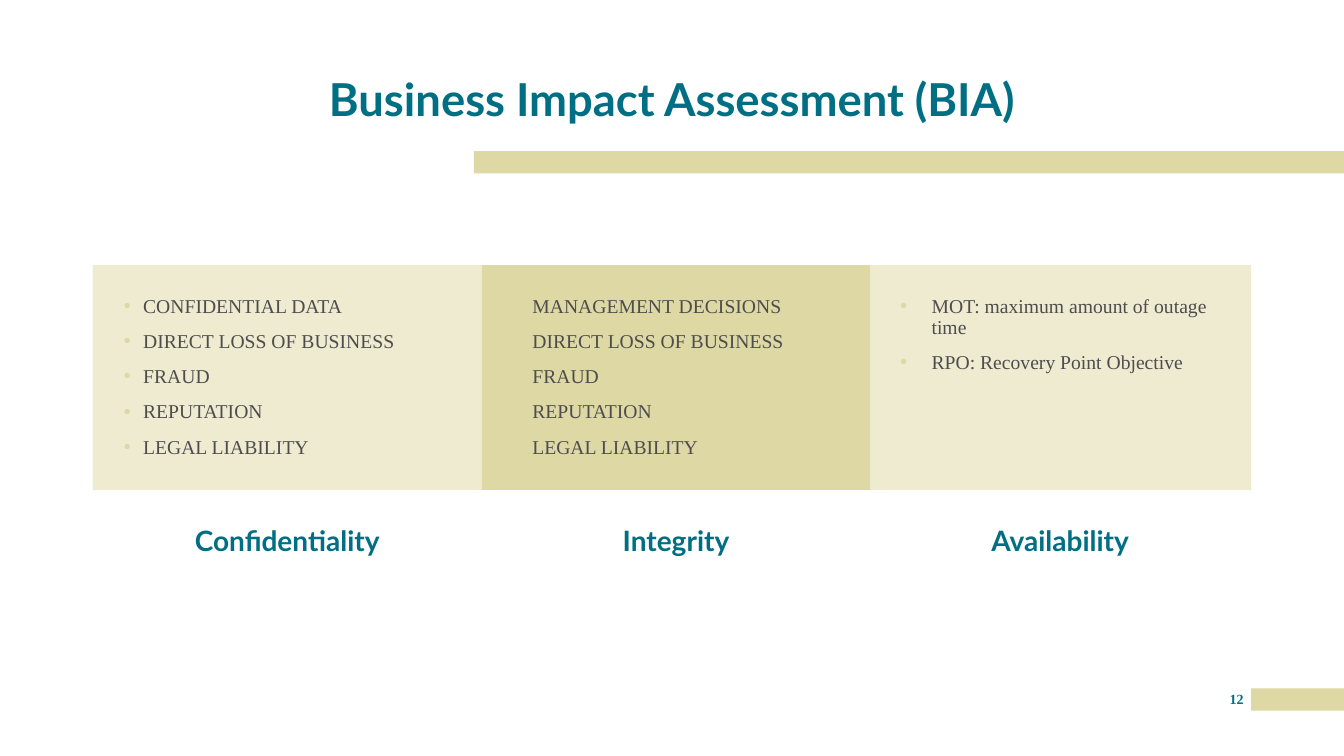
import pptx
import pptx.util
import pptx.dml.color
import pptx.enum.shapes
import pptx.enum.text
import pptx.oxml.ns
from lxml import etree

Inches = pptx.util.Inches
Pt = pptx.util.Pt
qn = pptx.oxml.ns.qn
ALIGN = pptx.enum.text.PP_ALIGN

PILLARS = [
    ("Confidentiality", 0.92, 3.86, 50, 0.19,
     ["CONFIDENTIAL DATA", "DIRECT LOSS OF BUSINESS", "FRAUD", "REPUTATION", "LEGAL LIABILITY"]),
    ("Integrity", 4.78, 3.85, 100, 0.19,
     ["MANAGEMENT DECISIONS", "DIRECT LOSS OF BUSINESS", "FRAUD", "REPUTATION", "LEGAL LIABILITY"]),
    ("Availability", 8.62, 3.79, 50, 0.31,
     ["MOT: maximum amount of outage time", "RPO: Recovery Point Objective"]),
]


def color(hex_code):
    return pptx.dml.color.RGBColor.from_string(hex_code)


def add_bullet(paragraph, indent, hex_code):
    properties = paragraph._p.get_or_add_pPr()
    properties.set("marL", str(Inches(indent)))
    properties.set("indent", str(-Inches(indent)))
    bullet_color = etree.SubElement(properties, qn("a:buClr"))
    etree.SubElement(bullet_color, qn("a:srgbClr"), val=hex_code)
    etree.SubElement(properties, qn("a:buFont"), typeface="Arial")
    etree.SubElement(properties, qn("a:buChar"), char="•")


class SlideBuilder:
    HEADING_FONT = "Lato"
    BODY_FONT = "Times New Roman"
    TEAL = "006F83"
    SAND = "DED8A4"
    GRAY = "4D4D4D"

    def __init__(self, slide):
        self.slide = slide

    def set_text(self, shape, lines, *, font, size, ink, bold=False, align=ALIGN.CENTER,
                 insets=(0, 0, 0, 0), spacing=0.9, before=0, indent=None):
        """Fill a shape with one paragraph per line; indent turns bullets on."""
        frame = shape.text_frame
        frame.word_wrap = True
        frame.auto_size = pptx.enum.text.MSO_AUTO_SIZE.NONE
        frame.vertical_anchor = pptx.enum.text.MSO_ANCHOR.TOP
        (frame.margin_left, frame.margin_top,
         frame.margin_right, frame.margin_bottom) = map(Inches, insets)
        frame.text = "\n".join(lines)
        for paragraph in frame.paragraphs:
            paragraph.alignment = align
            paragraph.line_spacing = spacing
            paragraph.space_before = Pt(before)
            if indent is not None:
                add_bullet(paragraph, indent, self.SAND)
            style = paragraph.runs[0].font
            style.name, style.size, style.bold = font, Pt(size), bold
            style.color.rgb = color(ink)

    def title(self, text, left, top, width, height):
        heading = self.slide.shapes.title
        heading.left, heading.top = Inches(left), Inches(top)
        heading.width, heading.height = Inches(width), Inches(height)
        self.set_text(heading, [text], font=self.HEADING_FONT, size=32.4, ink=self.TEAL, bold=True)

    def block(self, left, top, width, height, opacity=100):
        block = self.slide.shapes.add_shape(
            pptx.enum.shapes.MSO_SHAPE.RECTANGLE, *map(Inches, (left, top, width, height)))
        block.shadow.inherit = False
        block.line.fill.background()
        block.fill.solid()
        block.fill.fore_color.rgb = color(self.SAND)
        if opacity < 100:
            tint = block._element.spPr.find(qn("a:solidFill"))[0]
            etree.SubElement(tint, qn("a:alpha"), val=str(opacity * 1000))
        return block

    def label(self, text, left, top, width, height, **text_format):
        label = self.slide.shapes.add_textbox(*map(Inches, (left, top, width, height)))
        self.set_text(label, [text], ink=self.TEAL, bold=True, **text_format)

    def pillar(self, name, left, width, opacity, indent, impacts):
        panel = self.block(left, 2.63, width, 2.23, opacity)
        self.set_text(panel, impacts, font=self.BODY_FONT, size=14, ink=self.GRAY,
                      align=ALIGN.LEFT, insets=(0.31,) * 4, before=10, indent=indent)
        self.label(name, left, 5.18, width, 0.36, font=self.HEADING_FONT, size=20,
                   insets=(0.1, 0.05, 0.1, 0), before=6)


def main():
    deck = pptx.Presentation()
    deck.slide_width, deck.slide_height = Inches(13.33), Inches(7.5)
    builder = SlideBuilder(deck.slides.add_slide(deck.slide_layouts[5]))

    builder.title("Business Impact Assessment (BIA)", 0, 0.77, 13.33, 0.66)
    builder.block(4.7, 1.5, 8.63, 0.22)
    for pillar in PILLARS:
        builder.pillar(*pillar)
    builder.block(12.41, 6.83, 0.92, 0.22)
    builder.label("12", 12.12, 6.85, 0.29, 0.25, font=builder.BODY_FONT, size=10, spacing=1.0)

    deck.save("out.pptx")


if __name__ == "__main__":
    main()
